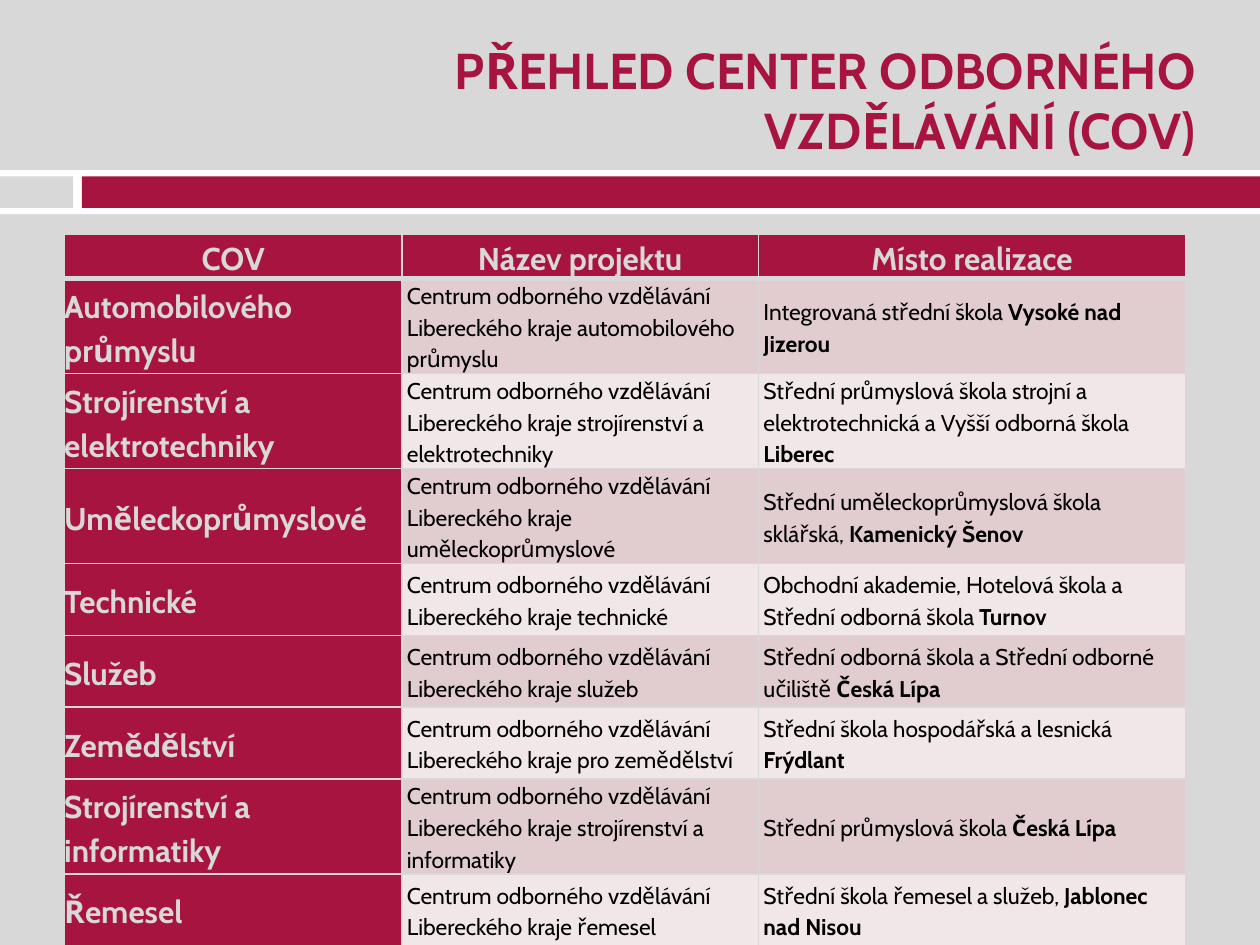
import pptx
import pptx.dml.color
import pptx.enum.shapes
import pptx.enum.text
import pptx.util
from lxml import etree
from pptx.util import Inches

FONT = "Cabin"
CRIMSON, GREY, WHITE, BLACK = "A7143F", "D8D8D8", "FFFFFF", "000000"
STRIPES = ["E1CCCF", "F1E7E8"]

TITLE = "PŘEHLED CENTER ODBORNÉHO VZDĚLÁVÁNÍ (COV)"
BANDS = [
    (0, 1.35, 10, 0.35, WHITE),
    (0, 1.4, 0.58, 0.25, GREY),
    (0.65, 1.4, 9.35, 0.25, CRIMSON),
]
HEADINGS = ["COV", "Název projektu", "Místo realizace"]
PROJECT = "Centrum odborného vzdělávání Libereckého kraje "
CENTERS = [
    ("Automobilového průmyslu", "automobilového průmyslu",
     "Integrovaná střední škola ", "Vysoké nad Jizerou", 0.68),
    ("Strojírenství a elektrotechniky", "strojírenství a elektrotechniky",
     "Střední průmyslová škola strojní a elektrotechnická a Vyšší odborná škola ", "Liberec", 0.68),
    ("Uměleckoprůmyslové", "uměleckoprůmyslové",
     "Střední uměleckoprůmyslová škola sklářská, ", "Kamenický Šenov", 0.68),
    ("Technické", "technické",
     "Obchodní akademie, Hotelová škola a Střední odborná škola ", "Turnov", 0.57),
    ("Služeb", "služeb",
     "Střední odborná škola a Střední odborné učiliště ", "Česká Lípa", 0.57),
    ("Zemědělství", "pro zemědělství",
     "Střední škola hospodářská a lesnická ", "Frýdlant", 0.57),
    ("Strojírenství a informatiky", "strojírenství a informatiky",
     "Střední průmyslová škola ", "Česká Lípa", 0.68),
    ("Řemesel", "řemesel",
     "Střední škola řemesel a služeb, ", "Jablonec nad Nisou", 0.57),
]
COLUMN_WIDTHS = [2.68, 2.83, 3.39]
HEADER_HEIGHT = 0.11


def rgb(color):
    return pptx.dml.color.RGBColor.from_string(color)


def paint(fill, color):
    fill.solid()
    fill.fore_color.rgb = rgb(color)


def style(font, size, color, bold=None):
    font.name = FONT
    font.size = pptx.util.Pt(size)
    font.color.rgb = rgb(color)
    if bold is not None:
        font.bold = bold


def set_borders(cell, top, bottom):
    properties = cell._tc.get_or_add_tcPr()
    for side, width in (("L", 1), ("R", 1), ("T", top), ("B", bottom)):
        line = etree.SubElement(properties, pptx.oxml.ns.qn(f"a:ln{side}"), w=str(pptx.util.Pt(width)))
        solid = etree.SubElement(line, pptx.oxml.ns.qn("a:solidFill"))
        etree.SubElement(solid, pptx.oxml.ns.qn("a:srgbClr"), val=GREY)


def fill_cell(cell, row, column, parts):
    is_label = row == 0 or column == 0
    set_borders(cell, 3 if row == 1 else 1, 3 if row == 0 else 1)
    paint(cell.fill, CRIMSON if is_label else STRIPES[(row - 1) % 2])
    cell.margin_left = cell.margin_right = Inches(0.04 if column else 0)
    cell.margin_top = cell.margin_bottom = 0
    anchor = pptx.enum.text.MSO_ANCHOR
    cell.vertical_anchor = anchor.MIDDLE if row or column else anchor.TOP
    paragraph = cell.text_frame.paragraphs[0]
    paragraph.line_spacing = 1.15
    align = pptx.enum.text.PP_ALIGN
    paragraph.alignment = align.LEFT if row else align.CENTER
    for index, text in enumerate(parts):
        run = paragraph.add_run()
        run.text = text
        style(run.font, 18 if is_label else 13, GREY if is_label else BLACK, is_label or index == 1)


def add_bands(slide):
    for left, top, width, height, color in BANDS:
        band = slide.shapes.add_shape(
            pptx.enum.shapes.MSO_SHAPE.RECTANGLE,
            Inches(left), Inches(top), Inches(width), Inches(height))
        band.shadow.inherit = False
        band.line.fill.background()
        paint(band.fill, color)


def add_title(slide):
    title = slide.shapes.title
    title.left, title.top, title.width, title.height = map(Inches, (1.38, 0.25, 8.21, 1.08))
    title.text_frame.text = TITLE
    title.text_frame.word_wrap = True
    title.text_frame.vertical_anchor = pptx.enum.text.MSO_ANCHOR.MIDDLE
    paragraph = title.text_frame.paragraphs[0]
    paragraph.alignment = pptx.enum.text.PP_ALIGN.RIGHT
    style(paragraph.font, 28.8, CRIMSON, True)


def add_centers(slide):
    rows = [[[heading] for heading in HEADINGS]]
    rows += [[[name], [PROJECT + field], [school, town]] for name, field, school, town, _ in CENTERS]
    heights = [HEADER_HEIGHT] + [center[-1] for center in CENTERS]
    frame = slide.shapes.add_table(
        len(rows), len(HEADINGS), Inches(0.51), Inches(1.86), Inches(8.9), Inches(5.53))
    centers = frame.table
    for column, width in zip(centers.columns, COLUMN_WIDTHS):
        column.width = Inches(width)
    for row, height in zip(centers.rows, heights):
        row.height = Inches(height)
    frame.height = Inches(5.53)
    for row, cells in enumerate(rows):
        for column, parts in enumerate(cells):
            fill_cell(centers.cell(row, column), row, column, parts)


def main():
    """Build the overview slide of vocational education centers."""
    deck = pptx.Presentation()
    deck.slide_width, deck.slide_height = Inches(10), Inches(7.5)
    slide = deck.slides.add_slide(deck.slide_layouts[5])
    paint(slide.background.fill, GREY)
    add_bands(slide)
    add_title(slide)
    add_centers(slide)
    deck.save("out.pptx")


if __name__ == "__main__":
    main()
